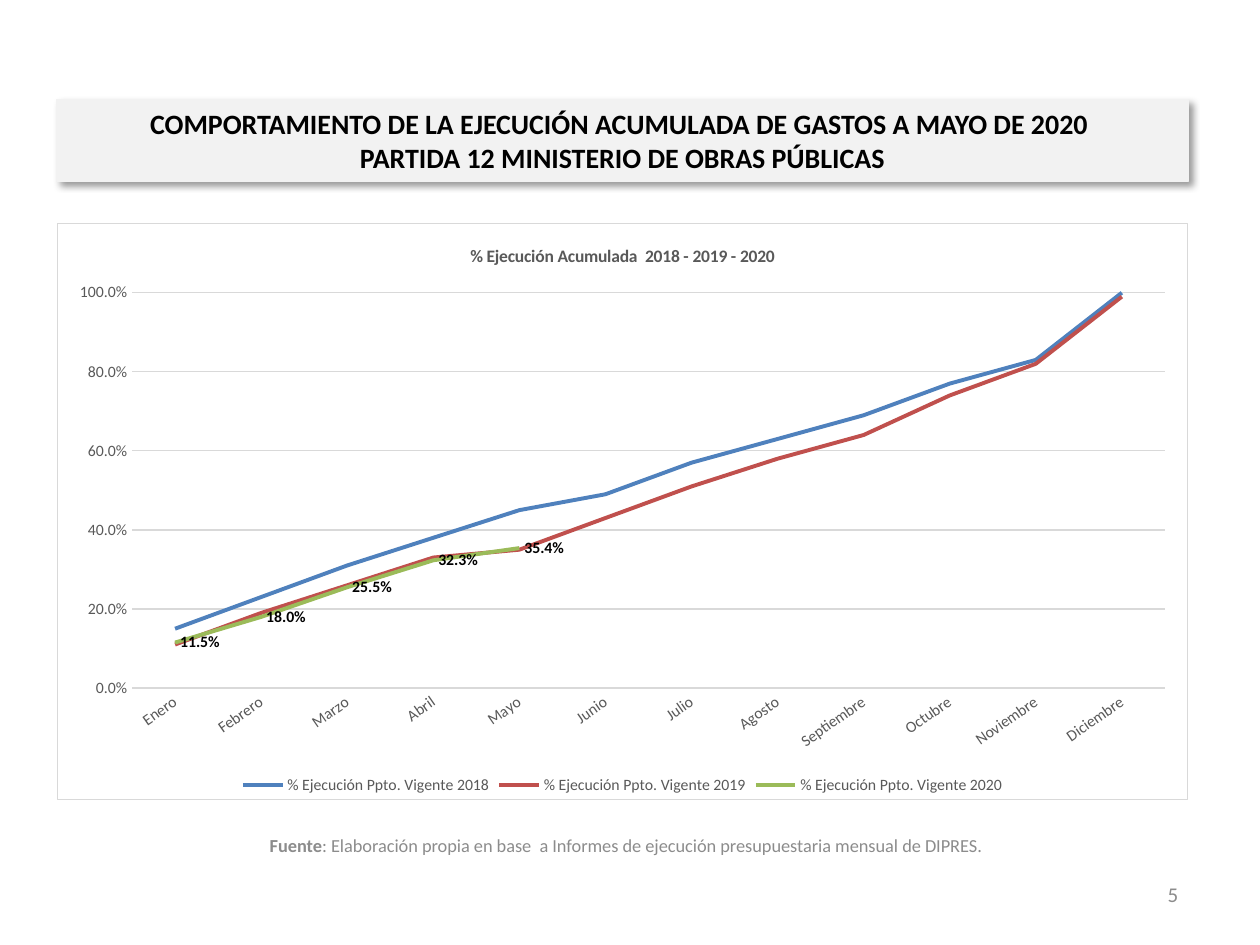
from dataclasses import dataclass

from lxml import etree
from pptx import Presentation
from pptx import util as u
from pptx.chart.data import CategoryChartData
from pptx.dml.color import RGBColor
from pptx.enum import chart as ch, shapes, text
from pptx.oxml import parse_xml
from pptx.oxml.ns import nsdecls, qn


@dataclass(frozen=True)
class Theme:
    font: str = "Calibri"
    ink: str = "000000"
    muted: str = "8C8C8C"
    axis: str = "595959"
    grid: str = "D9D9D9"
    banner: str = "F2F2F2"
    paper: str = "FFFFFF"
    lines: tuple = ("4F81BD", "C0504D", "9BBB59")
    heading_size: float = 16
    number_size: float = 12
    source_size: float = 10.5
    title_size: float = 10
    label_size: float = 9


MONTHS = ("Enero", "Febrero", "Marzo", "Abril", "Mayo", "Junio", "Julio", "Agosto",
          "Septiembre", "Octubre", "Noviembre", "Diciembre")
EXECUTION = {
    2018: (0.15, 0.23, 0.31, 0.38, 0.45, 0.49, 0.57, 0.63, 0.69, 0.77, 0.83, 1),
    2019: (0.11, 0.19, 0.26, 0.33, 0.35, 0.43, 0.51, 0.58, 0.64, 0.74, 0.82, 0.99),
    2020: (0.115, 0.18, 0.255, 0.323, 0.354),
}


class Report:
    def __init__(self, slide, theme):
        self.slide = slide
        self.theme = theme

    def box(self, at):
        return [u.Inches(length) for length in at]

    def style(self, font, size, color, bold=False):
        font.name = self.theme.font
        font.size = u.Pt(size)
        font.bold = bold
        font.color.rgb = RGBColor.from_string(color)

    def run(self, paragraph, words, size, color, bold=False):
        run = paragraph.add_run()
        run.text = words
        self.style(run.font, size, color, bold)

    def note(self, at, runs, align, size):
        frame = self.slide.shapes.add_textbox(*self.box(at)).text_frame
        frame.word_wrap = True
        frame.vertical_anchor = text.MSO_ANCHOR.MIDDLE
        paragraph = frame.paragraphs[0]
        paragraph.alignment = align
        for words, bold in runs:
            self.run(paragraph, words, size, self.theme.muted, bold)

    def banner(self, at, heading_lines):
        theme = self.theme
        banner = self.slide.shapes.add_shape(shapes.MSO_SHAPE.RECTANGLE, *self.box(at))
        banner.fill.solid()
        banner.fill.fore_color.rgb = RGBColor.from_string(theme.banner)
        banner.line.color.rgb = RGBColor.from_string(theme.banner)
        banner.line.width = u.Pt(0.75)
        banner.shadow.inherit = False
        effects = banner.element.spPr.find(qn("a:effectLst"))
        effects.append(parse_xml(
            f'<a:outerShdw {nsdecls("a")} blurRad="{u.Pt(4)}" dist="{u.Pt(3)}" '
            f'dir="{45 * 60000}" algn="tl" rotWithShape="0"><a:srgbClr val="{theme.ink}">'
            '<a:alpha val="40000"/></a:srgbClr></a:outerShdw>'))
        frame = banner.text_frame
        frame.word_wrap = True
        frame.vertical_anchor = text.MSO_ANCHOR.MIDDLE
        frame.margin_left = frame.margin_right = u.Inches(0.11)
        paragraph = frame.paragraphs[0]
        paragraph.alignment = text.PP_ALIGN.CENTER
        for index, words in enumerate(heading_lines):
            if index:
                paragraph.add_line_break()
            self.run(paragraph, words, theme.heading_size, theme.ink, True)

    def line_chart(self, at, title, months, execution, labelled_year):
        theme = self.theme
        data = CategoryChartData(number_format="0.0%")
        data.categories = months
        for year, shares in execution.items():
            padding = (None,) * (len(months) - len(shares))
            data.add_series(f"% Ejecución Ppto. Vigente {year}", shares + padding)
        chart = self.slide.shapes.add_chart(
            ch.XL_CHART_TYPE.LINE, *self.box(at), data).chart
        self.style(chart.font, theme.title_size, theme.ink)
        self.frame_chart(chart)

        chart.has_title = True
        chart.chart_title.include_in_layout = False
        heading = chart.chart_title.text_frame.paragraphs[0]
        self.run(heading, title, theme.title_size, theme.axis, True)
        chart.has_legend = True
        chart.legend.position = ch.XL_LEGEND_POSITION.BOTTOM
        chart.legend.include_in_layout = False
        self.style(chart.legend.font, theme.label_size, theme.axis)
        self.axes(chart)

        plot = chart.plots[0]
        plot.vary_by_categories = False
        for year, series, color in zip(execution, plot.series, theme.lines):
            series.smooth = False
            series.marker.style = ch.XL_MARKER_STYLE.NONE
            series.format.line.width = u.Pt(2.25)
            series.format.line.color.rgb = RGBColor.from_string(color)
            if year == labelled_year:
                labels = series.data_labels
                labels.show_value = True
                labels.number_format = "0.0%"
                labels.number_format_is_linked = False
                labels.position = ch.XL_LABEL_POSITION.RIGHT
                self.style(labels.font, theme.label_size, theme.ink, True)

    def frame_chart(self, chart):
        theme = self.theme
        chart_body = chart.element.find(qn("c:chart"))
        chart_body.addnext(parse_xml(
            f'<c:spPr {nsdecls("c", "a")}><a:solidFill><a:srgbClr val="{theme.paper}"/>'
            f'</a:solidFill><a:ln w="{u.Pt(0.75)}"><a:solidFill>'
            f'<a:srgbClr val="{theme.grid}"/></a:solidFill></a:ln></c:spPr>'))
        rounded = chart.element.find(qn("c:roundedCorners"))
        if rounded is None:
            rounded = etree.Element(qn("c:roundedCorners"))
            chart_body.addprevious(rounded)
        rounded.set("val", "0")

    def axes(self, chart):
        theme = self.theme
        month_axis, share_axis = chart.category_axis, chart.value_axis
        for axis in (month_axis, share_axis):
            axis.major_tick_mark = axis.minor_tick_mark = ch.XL_TICK_MARK.NONE
            self.style(axis.tick_labels.font, theme.label_size, theme.axis)
        month_axis.format.line.color.rgb = RGBColor.from_string(theme.grid)
        month_axis.format.line.width = u.Pt(1)
        month_labels = next(chart.element.iter(qn("c:catAx"))).find(qn("c:txPr"))
        label_body = month_labels.find(qn("a:bodyPr"))
        label_body.set("rot", str(-35 * 60000))
        label_body.set("vert", "horz")
        share_axis.minimum_scale = 0
        share_axis.maximum_scale = 1
        share_axis.major_unit = 0.2
        share_axis.tick_labels.number_format = "0.0%"
        share_axis.tick_labels.number_format_is_linked = False
        share_axis.format.line.fill.background()
        grid = share_axis.major_gridlines.format.line
        grid.color.rgb = RGBColor.from_string(theme.grid)
        grid.width = u.Pt(0.75)


def main():
    deck = Presentation()
    deck.slide_width, deck.slide_height = u.Inches(10), u.Inches(7.5)
    theme = Theme()
    report = Report(deck.slides.add_slide(deck.slide_layouts[6]), theme)
    source = (("Fuente", True),
              (": Elaboración propia en base  a Informes de ejecución presupuestaria "
               "mensual de DIPRES.", False))
    report.note((0.61, 6.51, 8.72, 0.4), source, text.PP_ALIGN.CENTER, theme.source_size)
    report.note((7.12, 6.9, 2.33, 0.4), (("5", False),), text.PP_ALIGN.RIGHT,
                theme.number_size)
    report.banner((0.45, 0.79, 8.98, 0.65),
                  ("COMPORTAMIENTO DE LA EJECUCIÓN ACUMULADA DE GASTOS A MAYO DE 2020 ",
                   "PARTIDA 12 MINISTERIO DE OBRAS PÚBLICAS"))
    report.line_chart((0.45, 1.77, 8.98, 4.58), "% Ejecución Acumulada  2018 - 2019 - 2020",
                      MONTHS, EXECUTION, 2020)
    deck.save("out.pptx")


if __name__ == "__main__":
    main()
